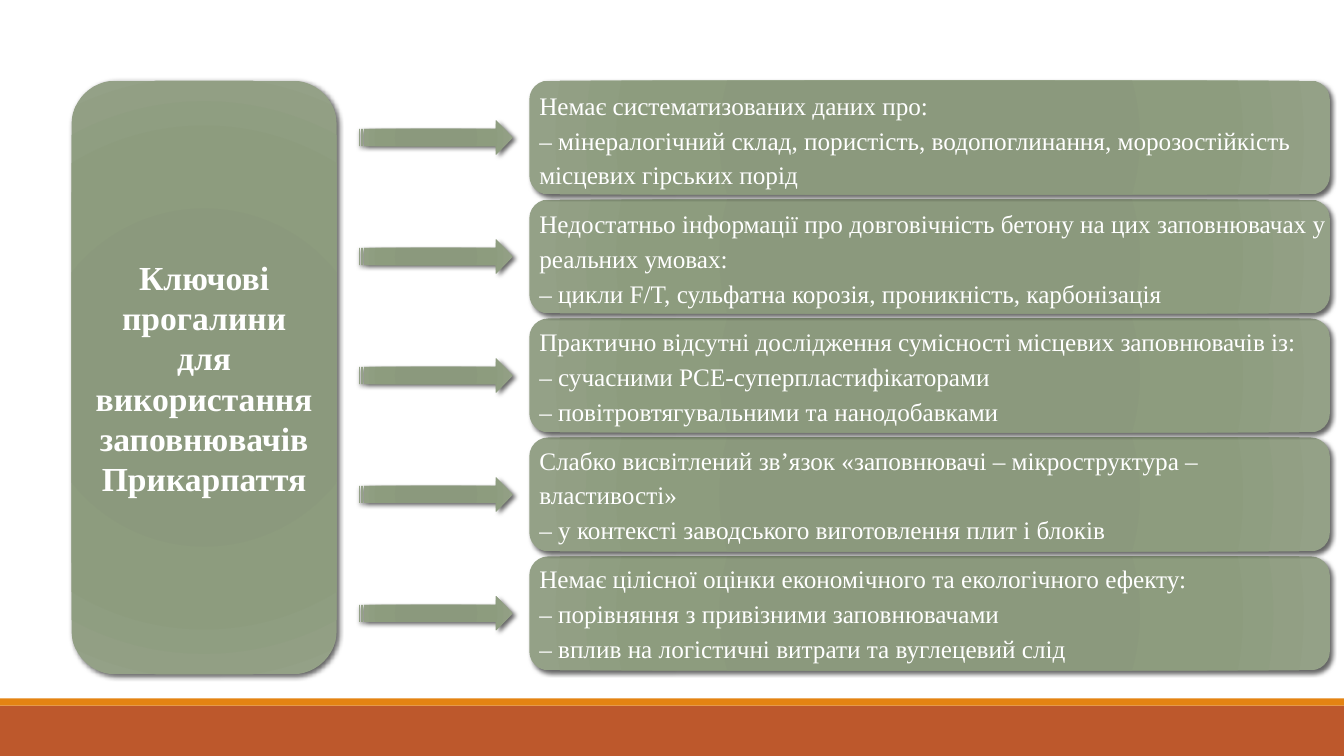
from pptx import Presentation
from pptx.dml.color import RGBColor
from pptx.enum.shapes import MSO_SHAPE as Preset
from pptx.enum.text import MSO_ANCHOR as Anchor, MSO_AUTO_SIZE as AutoSize, PP_ALIGN as Align
from pptx.oxml import parse_xml
from pptx.oxml.ns import nsdecls
from pptx.util import Inches, Pt

WHITE = RGBColor(0xFF, 0xFF, 0xFF)
BLACK = RGBColor(0x00, 0x00, 0x00)
RUST = RGBColor(0xBD, 0x58, 0x2C)
ORANGE = RGBColor(0xE4, 0x83, 0x12)
SAGE_STOPS = (
    (0, RGBColor(0x8A, 0x98, 0x7B)),
    (34, RGBColor(0x8B, 0x99, 0x7D)),
    (70, RGBColor(0x8D, 0x9C, 0x7E)),
    (100, RGBColor(0x94, 0xA1, 0x87)),
)
FONT = "Times New Roman"
SLIDE_WIDTH, SLIDE_HEIGHT = 13.33, 7.5

# Rows and columns of the diagram, in inches
TOP, HEIGHT = 0.8, 5.89
ROW_PITCH, CARD_HEIGHT = 1.18, 1.13
HEADING_LEFT, HEADING_WIDTH = 0.71, 2.63
ARROW_LEFT, ARROW_WIDTH, ARROW_HEIGHT = 3.56, 1.53, 0.34
CARD_LEFT, CARD_WIDTH = 5.25, 7.94

HEADING = "Ключові прогалини для використання заповнювачів Прикарпаття"
GAPS = (
    "Немає систематизованих даних про:\n"
    "– мінералогічний склад, пористість, водопоглинання, морозостійкість місцевих гірських порід",
    "Недостатньо інформації про довговічність бетону на цих заповнювачах у реальних умовах:\n"
    "– цикли F/T, сульфатна корозія, проникність, карбонізація",
    "Практично відсутні дослідження сумісності місцевих заповнювачів із:\n"
    "– сучасними PCE-суперпластифікаторами\n"
    "– повітровтягувальними та нанодобавками",
    "Слабко висвітлений зв’язок «заповнювачі – мікроструктура – властивості»\n"
    "– у контексті заводського виготовлення плит і блоків",
    "Немає цілісної оцінки економічного та екологічного ефекту:\n"
    "– порівняння з привізними заповнювачами\n"
    "– вплив на логістичні витрати та вуглецевий слід",
)


def add_preset(slide, preset, box):
    shape = slide.shapes.add_shape(preset, *map(Inches, box))
    shape.shadow.inherit = False
    shape.line.fill.background()
    return shape


def add_bar(slide, box, colour):
    bar = add_preset(slide, Preset.RECTANGLE, box)
    bar.fill.solid()
    bar.fill.fore_color.rgb = colour


def add_sage_shape(slide, preset, box):
    """Add a shape with the radial sage gradient and a soft shadow."""
    shape = add_preset(slide, preset, box)
    properties = shape.fill._xPr
    stops = "".join(
        f'<a:gs pos="{share * 1000}"><a:srgbClr val="{colour}"/></a:gs>'
        for share, colour in SAGE_STOPS
    )
    gradient = parse_xml(
        f'<a:gradFill {nsdecls("a")} rotWithShape="1"><a:gsLst>{stops}</a:gsLst>'
        '<a:path path="circle"><a:fillToRect l="100000" t="100000" r="100000" b="100000"/>'
        "</a:path></a:gradFill>"
    )
    properties.insert(2, gradient)  # after position and geometry
    shadow = parse_xml(
        f'<a:outerShdw {nsdecls("a")} blurRad="{Pt(3.5)}" dist="{Pt(2)}" dir="2700000" '
        f'rotWithShape="0"><a:srgbClr val="{BLACK}"><a:alpha val="60000"/></a:srgbClr>'
        "</a:outerShdw>"
    )
    properties.effectLst.append(shadow)
    return shape


def write_paragraph(paragraph, text, font_format, paragraph_format):
    paragraph.text = text
    for name, value in paragraph_format.items():
        setattr(paragraph, name, value)
    for run in paragraph.runs:
        run.font.color.rgb = WHITE
        for name, value in font_format.items():
            setattr(run.font, name, value)


def add_footer(slide, top, height):
    stripe = 0.07
    add_bar(slide, (0, top, SLIDE_WIDTH, height), RUST)
    add_bar(slide, (0, top - stripe, SLIDE_WIDTH, stripe), ORANGE)


def add_heading(slide, box):
    panel = add_sage_shape(slide, Preset.ROUNDED_RECTANGLE, box)
    frame = panel.text_frame
    frame.word_wrap = True
    frame.vertical_anchor = Anchor.MIDDLE
    write_paragraph(frame.paragraphs[0], HEADING,
                    {"name": FONT, "size": Pt(24), "bold": True},
                    {"alignment": Align.CENTER})


def add_row(slide, top):
    """Add one card with the arrow that points to its middle."""
    add_sage_shape(slide, Preset.ROUNDED_RECTANGLE, (CARD_LEFT, top, CARD_WIDTH, CARD_HEIGHT))
    arrow_top = top + (CARD_HEIGHT - ARROW_HEIGHT) / 2
    add_sage_shape(slide, Preset.STRIPED_RIGHT_ARROW,
                   (ARROW_LEFT, arrow_top, ARROW_WIDTH, ARROW_HEIGHT))


def add_gap_list(slide, box):
    """Add the text that runs down over all the cards."""
    frame = slide.shapes.add_textbox(*map(Inches, box)).text_frame
    frame.word_wrap = True
    frame.auto_size = AutoSize.SHAPE_TO_FIT_TEXT
    for index, gap in enumerate(GAPS):
        paragraph = frame.add_paragraph() if index else frame.paragraphs[0]
        write_paragraph(paragraph, gap, {"name": FONT, "size": Pt(18)},
                        {"line_spacing": 1.15, "space_after": Pt(10)})


def main():
    presentation = Presentation()
    presentation.slide_width = Inches(SLIDE_WIDTH)
    presentation.slide_height = Inches(SLIDE_HEIGHT)
    slide = presentation.slides.add_slide(presentation.slide_layouts[6])

    add_footer(slide, 7, 0.5)
    # Bottom row first, so upper cards lie over lower ones
    for row in reversed(range(len(GAPS))):
        add_row(slide, TOP + row * ROW_PITCH)
    add_heading(slide, (HEADING_LEFT, TOP, HEADING_WIDTH, HEIGHT))
    add_gap_list(slide, (CARD_LEFT, TOP, SLIDE_WIDTH - CARD_LEFT, HEIGHT))

    presentation.save("out.pptx")


if __name__ == "__main__":
    main()
